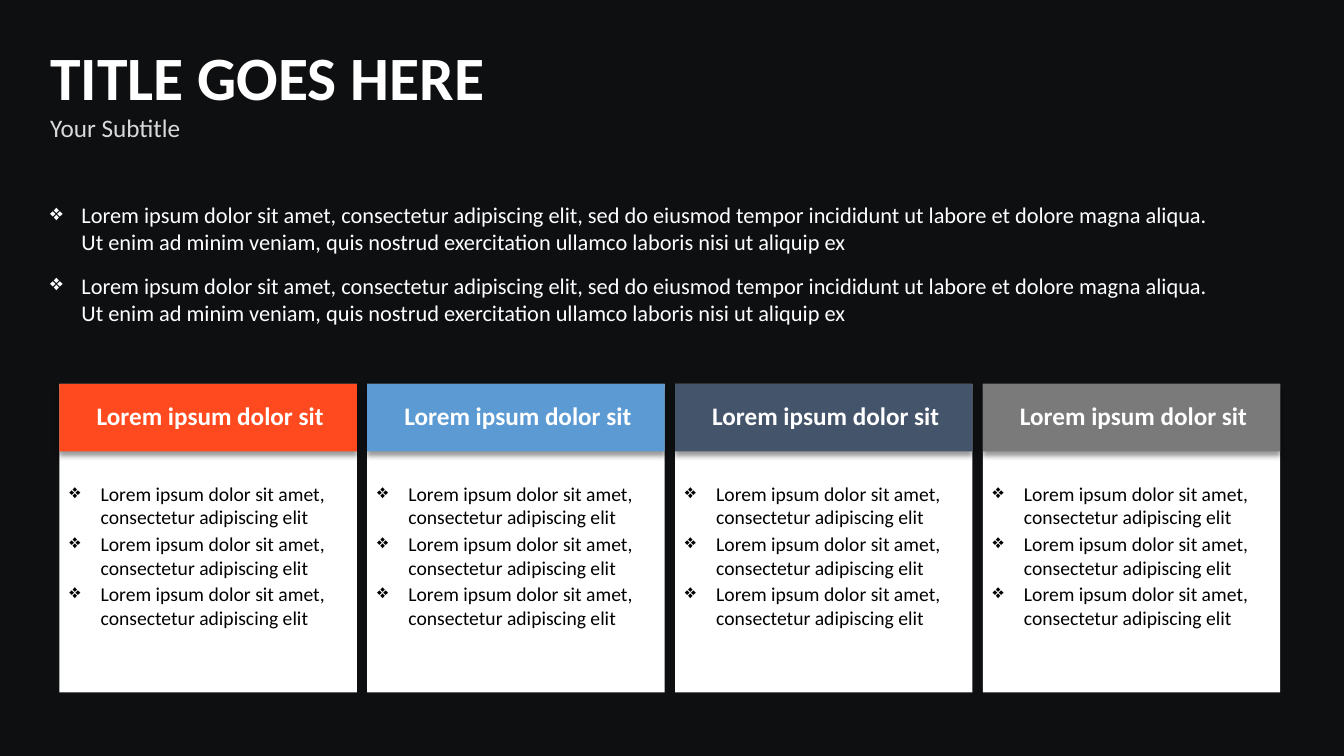
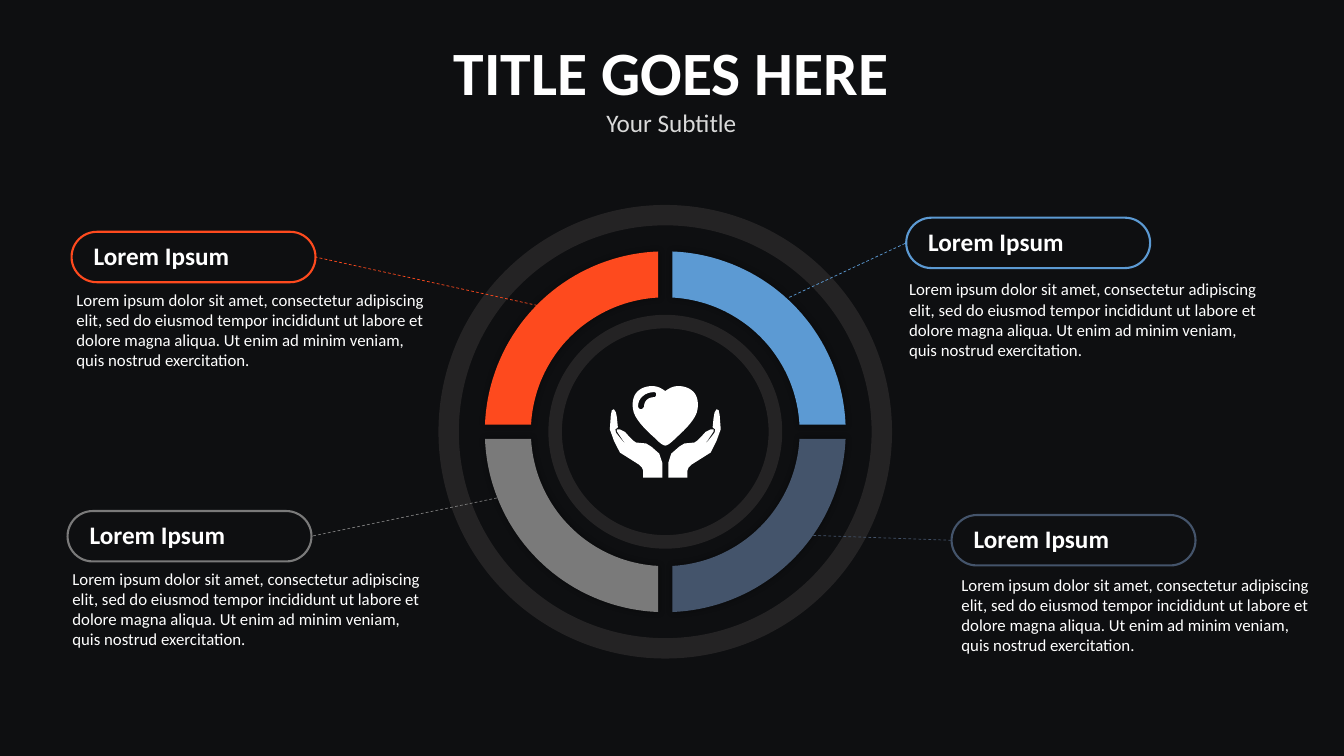
from dataclasses import dataclass
from math import asin, cos, pi, sin

from lxml.etree import SubElement as Sub
from pptx import Presentation
from pptx.dml.color import RGBColor as Rgb
from pptx.enum.dml import MSO_LINE as Dash
from pptx.enum.shapes import MSO_CONNECTOR as Link, MSO_SHAPE as Form
from pptx.enum.text import MSO_AUTO_SIZE as Fit, PP_ALIGN as Align
from pptx.oxml.ns import qn
from pptx.util import Emu, Inches, Pt

# Square grid: 80 columns by 45 rows
WIDE, HIGH = Inches(40 / 3), Inches(7.5)
CELL = HIGH / 45


@dataclass(frozen=True)
class Theme:
    font: str = "Calibri"
    back: str = "0E0F11"
    white: str = "FFFFFF"
    black: str = "000000"
    soft: str = "D9D9D9"
    ring: str = "3B3838"
    hues: tuple = ("FE4A1E", "5C9AD3", "44546B", "7A7A7A")
    title: int = 44
    head: int = 18
    lead: int = 16
    item: int = 14
    note: int = 12


T = Theme()
LOREM = "Lorem ipsum dolor sit amet, consectetur adipiscing elit"
TEMPOR = LOREM + ", sed do eiusmod tempor incididunt ut labore et dolore magna aliqua. "
LEAD = TEMPOR + ("Ut enim ad minim veniam, quis nostrud exercitation "
                 "ullamco laboris nisi ut aliquip ex")
NOTE = TEMPOR + "Ut enim ad minim veniam, quis nostrud exercitation."


def grid(*vals):
    return [Emu(round(v * CELL)) for v in vals]


# Basic parts
def paint(shape, fill=None, line=None, width=1.5, alpha=None, glow=None):
    """Fill and outline a shape; glow is (blur, distance, angle)."""
    shape.shadow.inherit = False
    if fill:
        shape.fill.solid()
        shape.fill.fore_color.rgb = Rgb.from_string(fill)
    else:
        shape.fill.background()
    if line:
        shape.line.color.rgb = Rgb.from_string(line)
        shape.line.width = Pt(width)
    else:
        shape.line.fill.background()
    props = shape.element.spPr
    if alpha:
        tint = props.find(qn("a:solidFill"))[0]
        Sub(tint, qn("a:alpha"), val=str(alpha * 1000))
    if glow:
        blur, dist, turn = glow
        cast = Sub(props.find(qn("a:effectLst")), qn("a:outerShdw"),
                   blurRad=str(Pt(blur)), dist=str(Pt(dist)),
                   dir=str(turn * 60000), rotWithShape="0")
        tint = Sub(cast, qn("a:srgbClr"), val=T.black)
        Sub(tint, qn("a:alpha"), val="40000")
    return shape


def shape(slide, form, box, **look):
    return paint(slide.shapes.add_shape(form, *grid(*box)), **look)


def bullet(para):
    props = para._p.get_or_add_pPr()
    props.set("marL", str(Inches(0.31)))
    props.set("indent", str(-Inches(0.31)))
    Sub(props, qn("a:buChar"), char="❖")


def text(slide, box, rows, align=Align.LEFT, marks=False):
    """Each row is (words, size, colour, bold)."""
    frame = slide.shapes.add_textbox(*grid(*box)).text_frame
    frame.word_wrap = True
    frame.auto_size = Fit.SHAPE_TO_FIT_TEXT
    for i, (words, size, hue, bold) in enumerate(rows):
        para = frame.add_paragraph() if i else frame.paragraphs[0]
        para.alignment = align
        if marks:
            if i:
                para.space_before = Pt(2.3)
            bullet(para)
        run = para.add_run()
        run.text = words
        font = run.font
        font.name, font.size, font.bold = T.font, Pt(size), bold
        font.color.rgb = Rgb.from_string(hue)


def outline(slide, *loops, **look):
    """Draw closed loops of grid points as one shape."""
    first, *rest = [[grid(*p) for p in loop] for loop in loops]
    pen = slide.shapes.build_freeform(*first[0], scale=1.0)
    pen.add_line_segments(first[1:], close=True)
    for loop in rest:
        pen.move_to(*loop[0])
        pen.add_line_segments(loop[1:], close=True)
    return paint(pen.convert_to_shape(), **look)


def curve(pts, steps=8):
    """Sample a chain of cubic curves: start, then three points each."""
    out = [pts[0]]
    for k in range(0, len(pts) - 1, 3):
        for s in range(1, steps + 1):
            t = s / steps
            u = 1 - t
            mix = (u ** 3, 3 * u * u * t, 3 * u * t * t, t ** 3)
            out.append(tuple(sum(m * p[d] for m, p in zip(mix, pts[k:k + 4]))
                             for d in (0, 1)))
    return out


def title(slide, box, align):
    text(slide, box, [("TITLE GOES HERE", T.title, T.white, True),
                      ("Your Subtitle", T.head, T.soft, False)], align)


# Card slide
def card(slide, box, hue):
    x, y, w, h = box
    shape(slide, Form.RECTANGLE, box, fill=T.white)
    shape(slide, Form.RECTANGLE, (x, y, w, 4.02), fill=hue, glow=(4, 3, 90))
    text(slide, (x, y + 5.52, w + 0.24, 11.34),
         [(LOREM, T.item, T.black, False)] * 3, marks=True)
    text(slide, (x, y + 0.66, w + 0.24, 2.4),
         [("Lorem ipsum dolor sit", T.head, T.white, True)], Align.CENTER)


def cards(slide):
    title(slide, (2.4, 2, 39, 6.84), Align.LEFT)
    for i in range(2):
        text(slide, (2.4, 11.7 + 4.2 * i, 71.34, 3.84),
             [(LEAD, T.lead, T.white, False)], marks=True)
    for i, hue in enumerate(T.hues):
        card(slide, (3.54 + 18.32 * i, 22.86, 17.7, 18.36), hue)


# Wheel slide
def sector(slide, mid, turn, hue, far=10.74, near=8, gap=0.42):
    """Quarter of the wheel, with straight ends set in by the gap."""
    def arc(rad):
        edge = asin(gap / rad)
        span = pi / 2 - 2 * edge
        return [(mid[0] + rad * cos(turn + edge + span * k / 40),
                 mid[1] + rad * sin(turn + edge + span * k / 40))
                for k in range(41)]
    outline(slide, arc(far) + arc(near)[::-1], fill=hue, glow=(5, 0, 0))


# Icon points, in hundredths of an inch from the icon's corner
HAND = [(41, 60), (36, 57), (26, 56), (23, 54), (20, 51), (15, 45.5), (10, 43),
        (7, 43), (7, 45), (13, 54), (17, 58), (13, 55), (9, 50), (6, 46),
        (5.5, 43), (8, 41), (7, 31), (6, 26), (4, 23), (2, 24), (1, 29),
        (0, 43), (4, 54), (10, 66), (29, 78), (32, 81), (33, 84), (33, 91),
        (52, 91), (52, 76), (49, 67), (41, 60)]
HEART = [(55, 5), (51, 2), (47, 0), (42, 0), (35, 0), (29, 3), (26, 7),
         (23, 11), (22, 17), (23, 23), (24, 32), (35, 43), (44, 51),
         (50, 57), (53, 59), (55, 59)]
GLEAM = [(44, 11), (38, 11), (34, 15), (34, 20), (34, 21), (32, 23), (31, 23),
         (29, 23), (28, 21), (28, 20), (28, 12), (35, 6), (44, 6),
         (45, 6), (46, 7), (46, 8), (46, 10), (45, 11), (44, 11)]


def icon(slide, mid):
    def put(pts, flip=1):
        return [(mid[0] + flip * (x - 55) * 0.06, mid[1] - 2.72 + y * 0.06)
                for x, y in pts]
    for flip in (1, -1):
        outline(slide, put(HAND, flip), fill=T.white)
    half = curve(HEART)
    outline(slide, put(half) + put(half, -1)[::-1], put(curve(GLEAM)),
            fill=T.white)


def wheel(slide, mid):
    for size, band in ((13.92, 0.058), (27, 0.045)):
        ring = shape(slide, Form.DONUT, (mid[0] - size / 2, mid[1] - size / 2,
                                         size, size), fill=T.ring, alpha=50)
        ring.adjustments[0] = band
    for i, hue in enumerate(T.hues):
        sector(slide, mid, pi + i * pi / 2, hue)
    icon(slide, mid)


def callout(slide, hue, spot, shift, tip):
    """Pill at spot, body text shifted from it, leader from the tip."""
    (x, y), w, h = spot, 14.52, 3
    side = x if tip[0] < x else x + w
    lead = slide.shapes.add_connector(Link.STRAIGHT,
                                      *grid(*tip, side, y + h / 2))
    lead.line.color.rgb = Rgb.from_string(hue)
    lead.line.width = Pt(0.5)
    lead.line.dash_style = Dash.DASH
    Sub(lead.element.spPr, qn("a:effectLst"))
    pill = shape(slide, Form.ROUNDED_RECTANGLE, (x, y, w, h), line=hue)
    pill.adjustments[0] = 0.5
    text(slide, (x + 0.72, y + 0.21, 10.74, 2.4),
         [("Lorem Ipsum", T.head, T.white, True)])
    text(slide, (x + shift[0], y + shift[1], 22.38, 5.46),
         [(NOTE, T.note, T.white, False)])


def hub(slide):
    title(slide, (21.9, 1.7, 36.12, 6.84), Align.CENTER)
    wheel(slide, (39.6, 25.7))
    spots = (((4.26, 13.8), (-0.3, 3.12), (31.98, 18.18)),
             ((53.94, 12.96), (-0.42, 3.36), (46.98, 17.7)),
             ((56.64, 30.66), (0, 3.24), (48.12, 31.86)),
             ((4.02, 30.42), (-0.3, 3.12), (29.88, 29.58)))
    for hue, spot in zip(T.hues, spots):
        callout(slide, hue, *spot)


def main():
    deck = Presentation()
    deck.slide_width, deck.slide_height = WIDE, HIGH
    fill = deck.slide_master.background.fill
    fill.solid()
    fill.fore_color.rgb = Rgb.from_string(T.back)
    for build in (cards, hub):
        build(deck.slides.add_slide(deck.slide_layouts[6]))
    deck.save("out.pptx")


if __name__ == "__main__":
    main()
